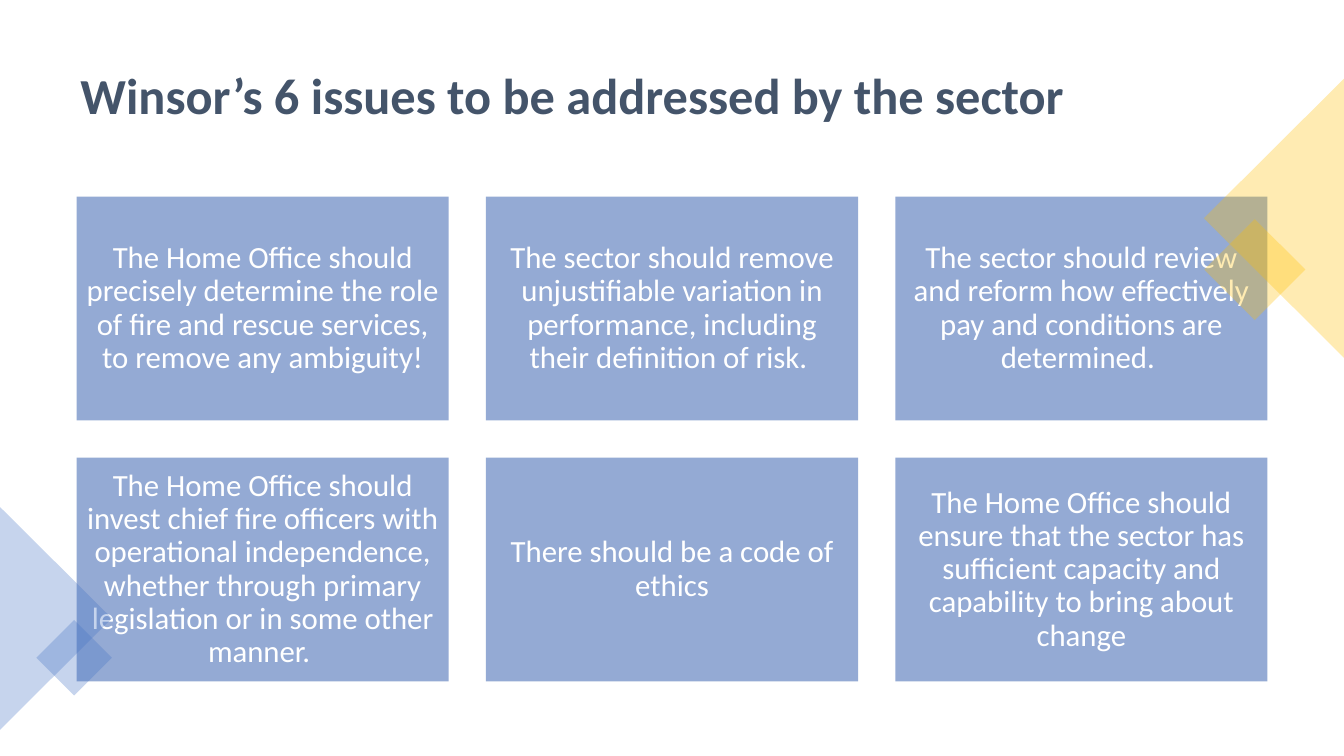
"""Build a slide with six issue cards and translucent corner decorations."""
from dataclasses import dataclass

from lxml import etree
from pptx import Presentation
from pptx import util as u
from pptx.dml import color
from pptx.enum import shapes, text
from pptx.oxml import ns

COLORS = {"title": "44546A", "card": "94AAD4", "card_text": "FFFFFF",
          "gold": "FFC000", "blue": "4472C4"}
FONT = "Calibri"
COLUMNS = 3
CARD_LEFT, CARD_TOP = 0.76, 1.95
CARD_WIDTH, CARD_HEIGHT = 3.69, 2.22
CARD_GAP = 0.37
CARD_INSET = 0.09

ISSUES = [
    "The Home Office should precisely determine the role of fire and rescue services, to remove any ambiguity!",
    "The sector should remove unjustifiable variation in performance, including their definition of risk. ",
    "The sector should review and reform how effectively pay and conditions are determined. ",
    "The Home Office should invest chief fire officers with operational independence, "
    "whether through primary legislation or in some other manner. ",
    "There should be a code of ethics",
    "The Home Office should ensure that the sector has sufficient capacity and capability to bring about change",
]


@dataclass(frozen=True)
class Block:
    left: float
    top: float
    width: float
    height: float
    fill: str
    kind: shapes.MSO_SHAPE = shapes.MSO_SHAPE.RECTANGLE
    rotation: float = 0
    opacity: int = 100


DECORATIONS = [
    Block(12.09, 2.32, 0.71, 0.71, "gold", rotation=45, opacity=30),
    Block(11.25, 1.47, 2.77, 1.39, "gold", shapes.MSO_SHAPE.ISOSCELES_TRIANGLE, 270, 30),
    Block(-0.55, 5.58, 2.21, 1.11, "blue", shapes.MSO_SHAPE.ISOSCELES_TRIANGLE, 90, 30),
    Block(0.47, 6.26, 0.53, 0.53, "blue", rotation=45, opacity=30),
]


def draw_block(slide, block: Block):
    shape = slide.shapes.add_shape(
        block.kind, u.Inches(block.left), u.Inches(block.top),
        u.Inches(block.width), u.Inches(block.height))
    shape.rotation = block.rotation
    shape.shadow.inherit = False
    shape.line.fill.background()
    shape.fill.solid()
    shape.fill.fore_color.rgb = color.RGBColor.from_string(COLORS[block.fill])
    if block.opacity < 100:
        fill_color = shape.fill._xPr.find(ns.qn("a:solidFill"))[0]
        etree.SubElement(fill_color, ns.qn("a:alpha"), val=str(block.opacity * 1000))
    return shape


def write_text(shape, content: str, *, size: float, fill: str, bold: bool = False,
               align: text.PP_ALIGN = text.PP_ALIGN.LEFT,
               inset_x: float = 0.1, inset_y: float = 0.05) -> None:
    frame = shape.text_frame
    frame.word_wrap = True
    frame.vertical_anchor = text.MSO_ANCHOR.MIDDLE
    frame.margin_left = frame.margin_right = u.Inches(inset_x)
    frame.margin_top = frame.margin_bottom = u.Inches(inset_y)
    paragraph = frame.paragraphs[0]
    paragraph.alignment = align
    paragraph.line_spacing = 0.9
    run = paragraph.add_run()
    run.text = content
    run.font.name = FONT
    run.font.size = u.Pt(size)
    run.font.bold = bold
    run.font.color.rgb = color.RGBColor.from_string(COLORS[fill])


def draw_cards(slide) -> None:
    for index, issue in enumerate(ISSUES):
        row, column = divmod(index, COLUMNS)
        card = draw_block(slide, Block(
            CARD_LEFT + column * (CARD_WIDTH + CARD_GAP),
            CARD_TOP + row * (CARD_HEIGHT + CARD_GAP),
            CARD_WIDTH, CARD_HEIGHT, "card"))
        write_text(card, issue, size=22, fill="card_text", align=text.PP_ALIGN.CENTER,
                   inset_x=CARD_INSET, inset_y=CARD_INSET)


def main() -> None:
    presentation = Presentation()
    presentation.slide_width = u.Inches(13.33)
    presentation.slide_height = u.Inches(7.5)
    slide = presentation.slides.add_slide(presentation.slide_layouts[6])
    title = slide.shapes.add_textbox(u.Inches(0.7), u.Inches(0.35), u.Inches(11.93), u.Inches(1.24))
    write_text(title, "Winsor’s 6 issues to be addressed by the sector",
               size=36, fill="title", bold=True)
    draw_cards(slide)
    for decoration in DECORATIONS:
        draw_block(slide, decoration)
    presentation.save("out.pptx")


if __name__ == "__main__":
    main()
